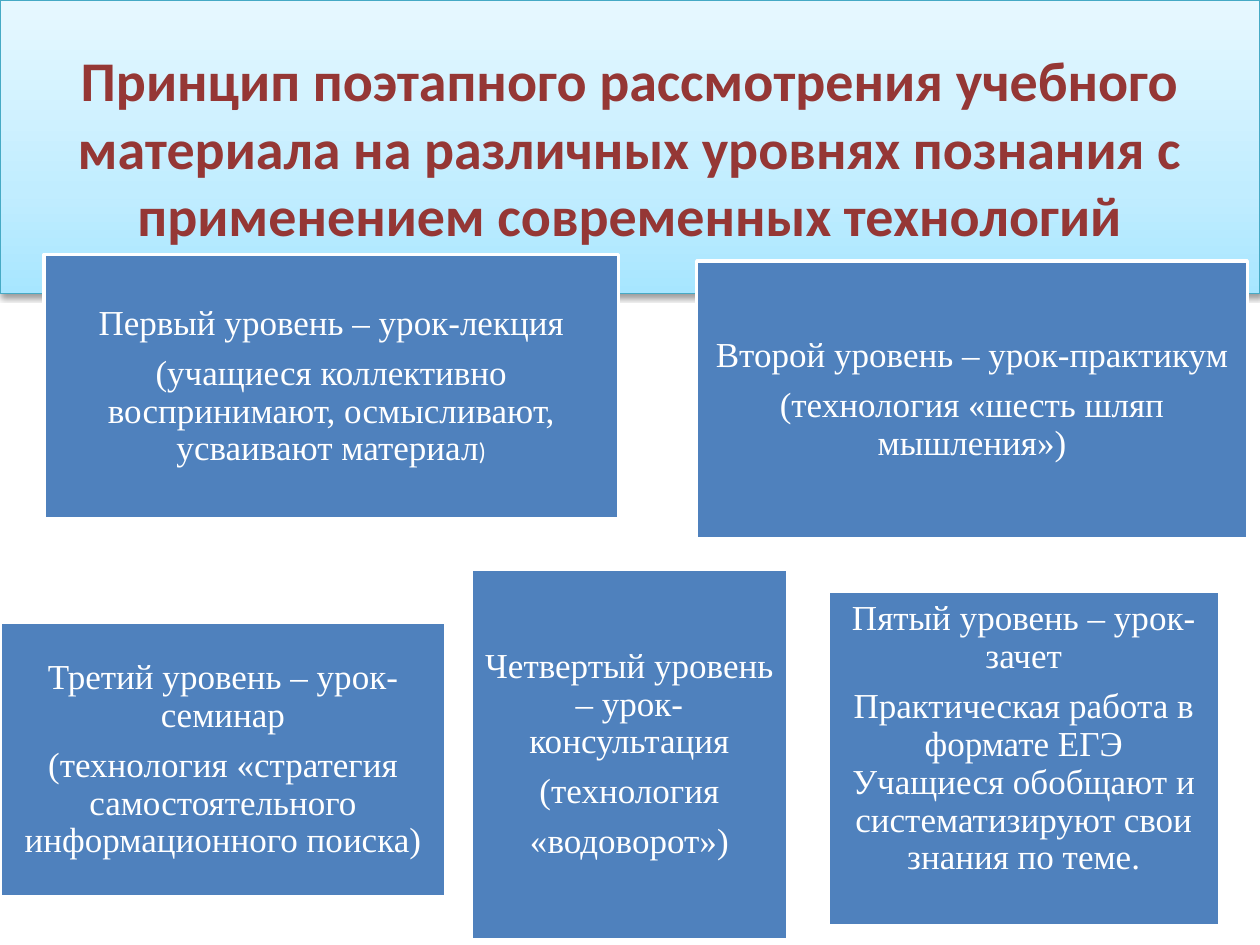
from dataclasses import dataclass

from lxml import etree
from pptx import Presentation
from pptx.dml.color import RGBColor
from pptx.enum.shapes import MSO_SHAPE
from pptx.enum.text import MSO_ANCHOR, MSO_AUTO_SIZE, PP_ALIGN
from pptx.oxml.ns import qn
from pptx.util import Inches, Pt

RECTANGLE = MSO_SHAPE.RECTANGLE
MIDDLE = MSO_ANCHOR.MIDDLE
CENTER = PP_ALIGN.CENTER
NO_AUTOFIT = MSO_AUTO_SIZE.NONE
TITLE_ONLY_LAYOUT = 5


@dataclass(frozen=True)
class Theme:
    title_font: str = "Calibri"
    body_font: str = "Times New Roman"
    title_size: int = 32
    body_size: int = 20
    small_size: int = 14
    title_color: str = "953735"
    title_line: str = "46AAC5"
    title_gradient: tuple = ((0, "A7E6FF"), (35, "C1EDFF"), (100, "E7F8FF"))
    shadow_color: str = "000000"
    box_fill: str = "4F81BD"
    light: str = "FFFFFF"


THEME = Theme()

# The slide is a grid of 100 columns by 75 rows
COLUMNS, ROWS = 100, 75
CELL = Inches(0.1)
INSET = 0.8

TITLE = ("Принцип поэтапного рассмотрения учебного материала на различных "
         "уровнях познания с применением современных технологий")

# Box (column, row, columns, rows), paragraphs, small closing text, extra bottom inset
LEVELS = [
    ((3.5, 20.2, 45.6, 21),
     ["Первый уровень – урок-лекция",
      "(учащиеся коллективно воспринимают, осмысливают, усваивают материал"], ")", 0),
    ((55.3, 20.7, 43.7, 22.1),
     ["Второй уровень – урок-практикум", "(технология «шесть шляп мышления»)"], "", 0),
    ((0, 49.4, 35.4, 21.8),
     ["Третий уровень – урок-семинар",
      "(технология «стратегия самостоятельного информационного поиска)"], "", 0),
    ((37.4, 45.2, 25.1, 29.4),
     ["Четвертый уровень – урок-консультация", "(технология", "«водоворот»)"], "", 0),
    ((65.7, 46.9, 31.1, 26.6),
     ["Пятый уровень – урок-зачет",
      "Практическая работа в формате ЕГЭ\v"
      "Учащиеся обобщают и систематизируют свои знания по теме."], "", 3.1),
]


def color(value):
    return RGBColor.from_string(value)


def cells(count):
    return round(count * CELL)


def style_font(font, name, size, value):
    font.name = name
    font.size = Pt(size)
    font.color.rgb = color(value)


def add_color_element(parent, value):
    return etree.SubElement(parent, qn("a:srgbClr"), val=value)


def fill_gradient(shape, stops):
    """Fill from bottom to top with any number of stops."""
    shape.fill.gradient()
    shape.fill.gradient_angle = 90
    stop_list = shape._element.spPr.find(".//" + qn("a:gsLst"))
    for stop in list(stop_list):
        stop_list.remove(stop)
    for position, value in stops:
        stop = etree.SubElement(stop_list, qn("a:gs"), pos=str(position * 1000))
        add_color_element(stop, value)


def add_shadow(shape):
    shape.shadow.inherit = False
    effects = shape._element.spPr.find(qn("a:effectLst"))
    shadow = etree.SubElement(
        effects, qn("a:outerShdw"), blurRad=str(Pt(3.1)), dist=str(Pt(1.6)),
        dir="5400000", rotWithShape="0")
    shadow_color = add_color_element(shadow, THEME.shadow_color)
    etree.SubElement(shadow_color, qn("a:alpha"), val="38000")


def place_title(slide, box):
    title = slide.shapes.title
    title.left, title.top, title.width, title.height = map(cells, box)
    fill_gradient(title, THEME.title_gradient)
    title.line.color.rgb = color(THEME.title_line)
    title.line.width = Pt(0.75)
    add_shadow(title)

    frame = title.text_frame
    frame.text = TITLE
    frame.word_wrap = True
    frame.auto_size = NO_AUTOFIT
    frame.vertical_anchor = MIDDLE
    paragraph = frame.paragraphs[0]
    paragraph.alignment = CENTER
    style_font(paragraph.font, THEME.title_font, THEME.title_size, THEME.title_color)
    paragraph.font.bold = True


def place_level(slide, box, texts, closing, extra_inset):
    shape = slide.shapes.add_shape(RECTANGLE, *map(cells, box))
    shape.shadow.inherit = False
    shape.fill.solid()
    shape.fill.fore_color.rgb = color(THEME.box_fill)
    shape.line.color.rgb = color(THEME.light)
    shape.line.width = Pt(2)

    frame = shape.text_frame
    frame.word_wrap = True
    frame.vertical_anchor = MIDDLE
    frame.margin_left = frame.margin_right = frame.margin_top = cells(INSET)
    frame.margin_bottom = cells(INSET + extra_inset)
    for index, text in enumerate(texts):
        paragraph = frame.add_paragraph() if index else frame.paragraphs[0]
        paragraph.text = text
        paragraph.alignment = CENTER
        paragraph.line_spacing = 0.9
        paragraph.space_after = Pt(0.35 * THEME.body_size)
        style_font(paragraph.font, THEME.body_font, THEME.body_size, THEME.light)
    if closing:
        run = paragraph.add_run()
        run.text = closing
        style_font(run.font, THEME.title_font, THEME.small_size, THEME.light)


def main():
    presentation = Presentation()
    presentation.slide_width = cells(COLUMNS)
    presentation.slide_height = cells(ROWS)
    slide = presentation.slides.add_slide(presentation.slide_layouts[TITLE_ONLY_LAYOUT])

    # Title band across the top
    place_title(slide, (0, 0, COLUMNS, 23.3))

    # Five levels of learning
    for level in LEVELS:
        place_level(slide, *level)

    presentation.save("out.pptx")


if __name__ == "__main__":
    main()
